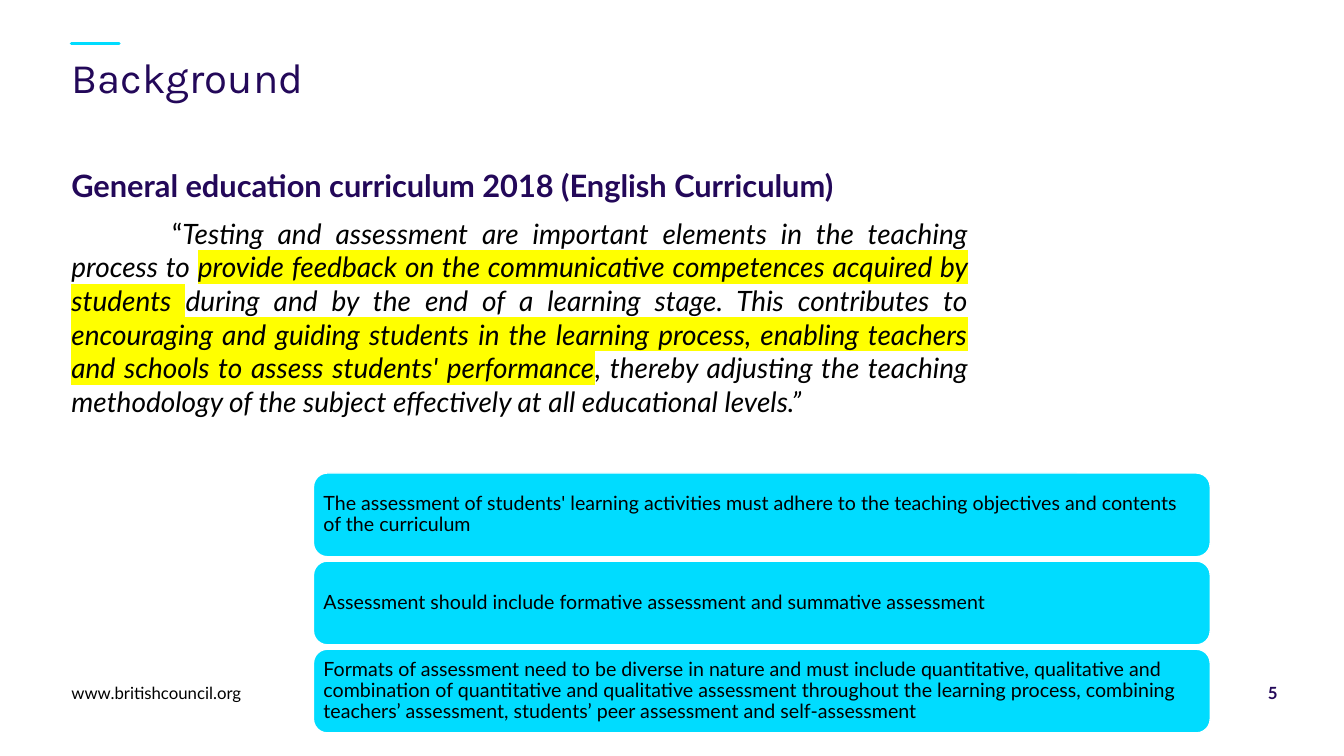
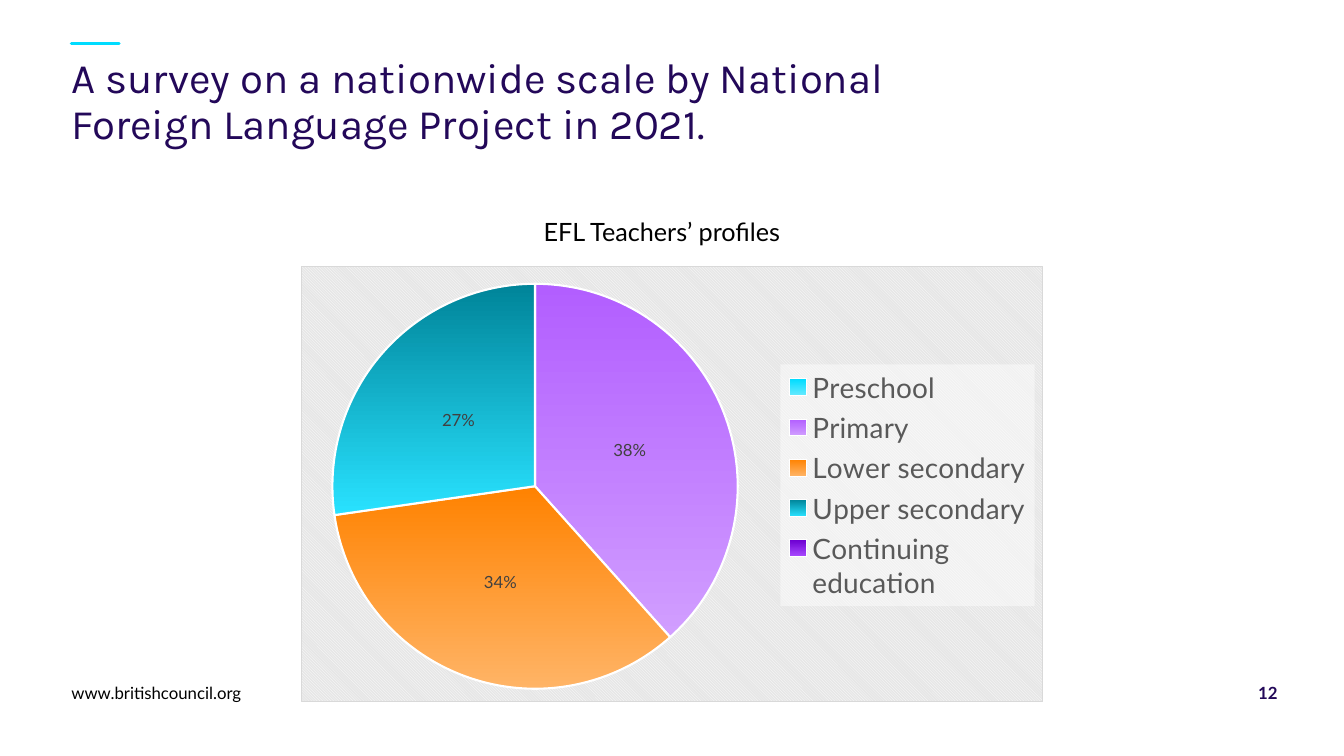
from dataclasses import dataclass
from pptx import Presentation
from pptx.chart.data import CategoryChartData
from pptx.dml.color import RGBColor
from pptx.enum import chart as ch, shapes, text
from pptx.oxml import parse_xml
from pptx.oxml.ns import qn
from pptx.util import Cm, Pt

A = 'xmlns:a="http://schemas.openxmlformats.org/drawingml/2006/main"'
C = 'xmlns:c="http://schemas.openxmlformats.org/drawingml/2006/chart"'


@dataclass(frozen=True)
class Theme:
    ink: str = "230859"
    accent: str = "00DCFF"
    black: str = "000000"
    white: str = "FFFFFF"
    mark: str = "FFFF00"
    grey: str = "595959"
    label: str = "404040"
    edge: str = "D9D9D9"
    panel: str = "E6E6E6"
    head: str = "Karla"
    body: str = "Lato"
    title: int = 30
    lead: int = 22
    quote: int = 20
    note: int = 18
    card: int = 14
    small: int = 12
    left: float = 1.8


T = Theme()

QUOTE = [
    ("“", False, False),
    ("Testing and assessment are important elements in the teaching process to ", True, False),
    ("provide feedback on the communicative competences acquired by students ", True, True),
    ("during and by the end of a learning stage. This contributes to ", True, False),
    ("encouraging and guiding students in the learning process, enabling teachers "
     "and schools to assess students' performance", True, True),
    (", thereby adjusting the teaching methodology of the subject effectively "
     "at all educational levels.”", True, False),
]

CARDS = [
    "The assessment of students' learning activities must adhere to the teaching "
    "objectives and contents of the curriculum",
    "Assessment should include formative assessment and summative assessment",
    "Formats of assessment need to be diverse in nature and must include quantitative, "
    "qualitative and combination of quantitative and qualitative assessment throughout "
    "the learning process, combining teachers’ assessment, students’ peer assessment "
    "and self-assessment",
]

# Level, share of teachers, top and bottom colour of the slice
LEVELS = [
    ("Preschool", 0, "00DCFF", "66EAFF"),
    ("Primary", 38, "B25EFF", "D19EFF"),
    ("Lower secondary", 34, "FF8200", "FFB466"),
    ("Upper secondary", 27, "008499", "29E2FF"),
    ("Continuing education", 0, "6D00D1", "A94BFF"),
]


def rgb(code):
    return RGBColor.from_string(code)


def style(font, size, color, face=T.body, bold=False):
    font.size, font.name, font.bold = Pt(size), face, bold
    font.color.rgb = rgb(color)


def setup(frame, anchor=text.MSO_ANCHOR.TOP, inset=0.0):
    frame.word_wrap = True
    frame.auto_size = text.MSO_AUTO_SIZE.NONE
    frame.vertical_anchor = anchor
    frame.margin_left = frame.margin_right = Cm(inset)
    frame.margin_top = frame.margin_bottom = Cm(inset)
    return frame


def label(slide, words, box, size, color, bold=False,
          align=text.PP_ALIGN.LEFT, anchor=text.MSO_ANCHOR.TOP):
    """Add a text box with one paragraph and return its frame."""
    frame = setup(slide.shapes.add_textbox(*map(Cm, box)).text_frame, anchor)
    para = frame.paragraphs[0]
    para.text, para.alignment = words, align
    style(para.font, size, color, bold=bold)
    return frame


def page(deck, title, number, width):
    """Add a slide with the title, accent line and footer that all share."""
    slide = deck.slides.add_slide(deck.slide_layouts[5])
    head = slide.shapes.title
    head.left, head.top, head.width, head.height = map(Cm, (T.left, 1.4, width, 2.2))
    para = setup(head.text_frame).paragraphs[0]
    para.text, para.alignment = title, text.PP_ALIGN.LEFT
    para.line_spacing = Pt(33)
    style(para.font, T.title, T.ink, T.head)

    line = slide.shapes.add_connector(
        shapes.MSO_CONNECTOR.STRAIGHT, Cm(T.left), Cm(1.09), Cm(3), Cm(1.09))
    line.line.color.rgb, line.line.width = rgb(T.accent), Pt(2.4)
    line.line._get_or_add_ln().set("cap", "rnd")
    line._element.spPr.append(parse_xml(f"<a:effectLst {A}/>"))

    low = text.MSO_ANCHOR.BOTTOM
    label(slide, "www.britishcouncil.org", (T.left, 17.2, 29, 0.5),
          T.small, T.black, anchor=low)
    label(slide, str(number), (30.8, 17.2, 1.4, 0.5), T.small, T.ink,
          bold=True, align=text.PP_ALIGN.RIGHT, anchor=low)
    return slide


def quote(frame, parts):
    para = frame.add_paragraph()
    para.alignment = text.PP_ALIGN.JUSTIFY
    para.space_before, para.space_after = Pt(3), Pt(6)
    para._p.get_or_add_pPr().set("indent", str(Cm(2.54)))
    style(para.font, T.quote, T.black)
    for words, slant, marked in parts:
        run = para.add_run()
        run.text, run.font.italic = words, slant
        if marked:
            run._r.get_or_add_rPr().append(parse_xml(
                f'<a:highlight {A}><a:srgbClr val="{T.mark}"/></a:highlight>'))


def card(slide, words, top):
    box = slide.shapes.add_shape(
        shapes.MSO_SHAPE.ROUNDED_RECTANGLE, Cm(7.9), Cm(top), Cm(22.6), Cm(2.11))
    box.shadow.inherit = False
    box.fill.solid()
    box.fill.fore_color.rgb = rgb(T.accent)
    box.line.color.rgb, box.line.width = rgb(T.white), Pt(1)
    para = setup(box.text_frame, text.MSO_ANCHOR.MIDDLE, 0.15).paragraphs[0]
    para.text, para.alignment = words, text.PP_ALIGN.LEFT
    para.line_spacing = 0.9
    style(para.font, T.card, T.black)


def place(part, index, inner, *box):
    """Give a chart part a fixed place, in shares of the chart."""
    for old in part.findall(qn("c:layout")):
        part.remove(old)
    target = '<c:layoutTarget val="inner"/>' if inner else ""
    modes = "".join(f'<c:{k}Mode val="edge"/>' for k in "xy")
    sizes = "".join(f'<c:{k} val="{v}"/>' for k, v in zip("xywh", box))
    part.insert(index, parse_xml(
        f"<c:layout {C}><c:manualLayout>{target}{modes}{sizes}"
        "</c:manualLayout></c:layout>"))


def panel(before, paint):
    """Add shape properties right after a chart element."""
    before.addnext(parse_xml(f"<c:spPr {C} {A}>{paint}</c:spPr>"))


def solid(color, alpha=100):
    return (f'<a:solidFill><a:srgbClr val="{color}"><a:alpha val="{alpha * 1000}"/>'
            "</a:srgbClr></a:solidFill>")


def pie(slide, rows, box):
    data = CategoryChartData()
    data.categories = [row[0] for row in rows]
    data.add_series("Series 1", [row[1] for row in rows])
    chart = slide.shapes.add_chart(
        ch.XL_CHART_TYPE.PIE, *map(Cm, box), data).chart
    chart.has_title = False
    style(chart.font, 10, T.black)
    plot = chart.plots[0]
    plot.vary_by_categories = True
    for i, (_, _, top, base) in enumerate(rows):
        form = plot.series[0].points[i].format
        form.fill.gradient()
        form.fill.gradient_angle = 270
        for stop, color in zip(form.fill.gradient_stops, (top, base)):
            stop.color.rgb = rgb(color)
        form.line.color.rgb, form.line.width = rgb(T.white), Pt(1.5)

    plot.has_data_labels = True
    tags = plot.data_labels
    tags.show_percentage, tags.show_value = True, False
    tags.number_format, tags.number_format_is_linked = "0%", False
    tags.position = ch.XL_LABEL_POSITION.CENTER
    style(tags.font, T.small, T.label)

    chart.has_legend = True
    key = chart.legend
    key.position = ch.XL_LEGEND_POSITION.RIGHT
    key.include_in_layout = False
    style(key.font, T.quote, T.grey)

    root = chart._chartSpace
    place(root.find(".//" + qn("c:plotArea")), 0, True, 0.04, 0.04, 0.55, 0.93)
    place(key._element, 1, False, 0.646, 0.225, 0.343, 0.555)
    panel(key._element.find(qn("c:overlay")), solid(T.white, 45))
    panel(root.find(qn("c:chart")),
          f'<a:pattFill prst="dkDnDiag"><a:fgClr><a:srgbClr val="{T.white}"/></a:fgClr>'
          f'<a:bgClr><a:srgbClr val="{T.panel}"/></a:bgClr></a:pattFill>'
          f'<a:ln w="{Pt(0.75)}">{solid(T.edge)}</a:ln>')


def main():
    deck = Presentation()
    deck.slide_width, deck.slide_height = Cm(33.87), Cm(19.05)

    slide = page(deck, "Background", 5, 30.4)
    frame = label(slide, "General education curriculum 2018 (English Curriculum)",
                  (T.left, 4.2, 22.6, 12.5), T.lead, T.ink, bold=True)
    frame.paragraphs[0].space_after = Pt(6)
    quote(frame, QUOTE)
    for i, words in enumerate(CARDS):
        card(slide, words, 11.92 + i * 2.22)

    slide = page(deck, "A survey on a nationwide scale by National "
                 "Foreign Language Project in 2021.", 12, 23.95)
    pie(slide, LEVELS, (7.59, 6.7, 18.7, 11))
    label(slide, "EFL Teachers’ profiles", (13.7, 5.46, 6.5, 0.8), T.note, T.black)

    deck.save("out.pptx")


if __name__ == "__main__":
    main()
